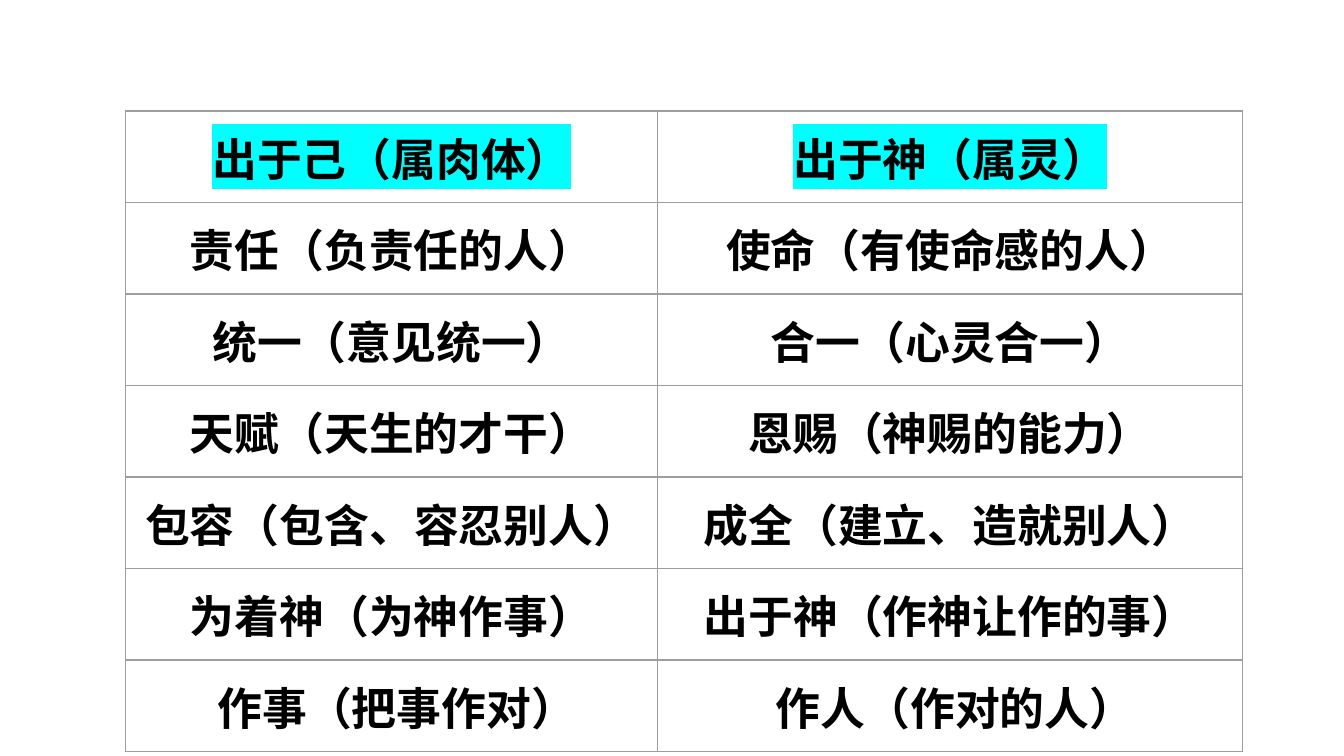
from lxml.etree import SubElement
from pptx import Presentation
from pptx.dml.color import RGBColor
from pptx.enum.text import PP_ALIGN as Align
from pptx.oxml.ns import qn
from pptx.util import Cm, Pt

COMPARISON = [
    ("出于己（属肉体）", "出于神（属灵）"),
    ("责任（负责任的人）", "使命（有使命感的人）"),
    ("统一（意见统一）", "合一（心灵合一）"),
    ("天赋（天生的才干）", "恩赐（神赐的能力）"),
    ("包容（包含、容忍别人）", "成全（建立、造就别人）"),
    ("为着神（为神作事）", "出于神（作神让作的事）"),
    (" 作事（把事作对）", " 作人（作对的人）"),
]
THEME = {
    "font": "Arial",
    "size": Pt(24),
    "text": "000000",
    "highlight": "00FFFF",
    "border": "9E9E9E",
    "border_width": Pt(0.75),
}
SLIDE_SIZE = Cm(25.4), Cm(14.29)
TABLE_LEFT, TABLE_TOP = Cm(2.37), Cm(2.1)
COLUMN_WIDTHS = Cm(10.06), Cm(11.05)
ROW_HEIGHT = Cm(1.07)
CELL_MARGIN = Cm(0.25)


def add_solid_color(parent, color):
    SubElement(parent, qn("a:srgbClr"), val=color)


def add_borders(cell):
    properties = cell._tc.get_or_add_tcPr()
    for side in ("a:lnL", "a:lnR", "a:lnT", "a:lnB"):
        line = SubElement(properties, qn(side), w=str(THEME["border_width"]))
        add_solid_color(SubElement(line, qn("a:solidFill")), THEME["border"])


def fill_cell(cell, text, is_heading):
    cell.margin_left = cell.margin_right = CELL_MARGIN
    cell.margin_top = cell.margin_bottom = CELL_MARGIN
    add_borders(cell)
    cell.fill.background()
    paragraph = cell.text_frame.paragraphs[0]
    paragraph.alignment = Align.CENTER
    font = paragraph.font
    font.name, font.size, font.bold = THEME["font"], THEME["size"], True
    font.color.rgb = RGBColor.from_string(THEME["text"])
    run = paragraph.add_run()
    run.text = text
    if is_heading:
        run_properties = run._r.get_or_add_rPr()
        add_solid_color(SubElement(run_properties, qn("a:highlight")), THEME["highlight"])


def add_comparison_table(slide):
    row_count = len(COMPARISON)
    table = slide.shapes.add_table(
        row_count, len(COLUMN_WIDTHS), TABLE_LEFT, TABLE_TOP,
        sum(COLUMN_WIDTHS), ROW_HEIGHT * row_count,
    ).table
    table.first_row = table.horz_banding = False
    for column, width in zip(table.columns, COLUMN_WIDTHS):
        column.width = width
    for row_index, texts in enumerate(COMPARISON):
        table.rows[row_index].height = ROW_HEIGHT
        for column_index, text in enumerate(texts):
            fill_cell(table.cell(row_index, column_index), text, row_index == 0)


def main():
    """Build a slide comparing what comes from self with what comes from God."""
    presentation = Presentation()
    presentation.slide_width, presentation.slide_height = SLIDE_SIZE
    slide = presentation.slides.add_slide(presentation.slide_layouts[6])
    add_comparison_table(slide)
    presentation.save("out.pptx")


if __name__ == "__main__":
    main()
